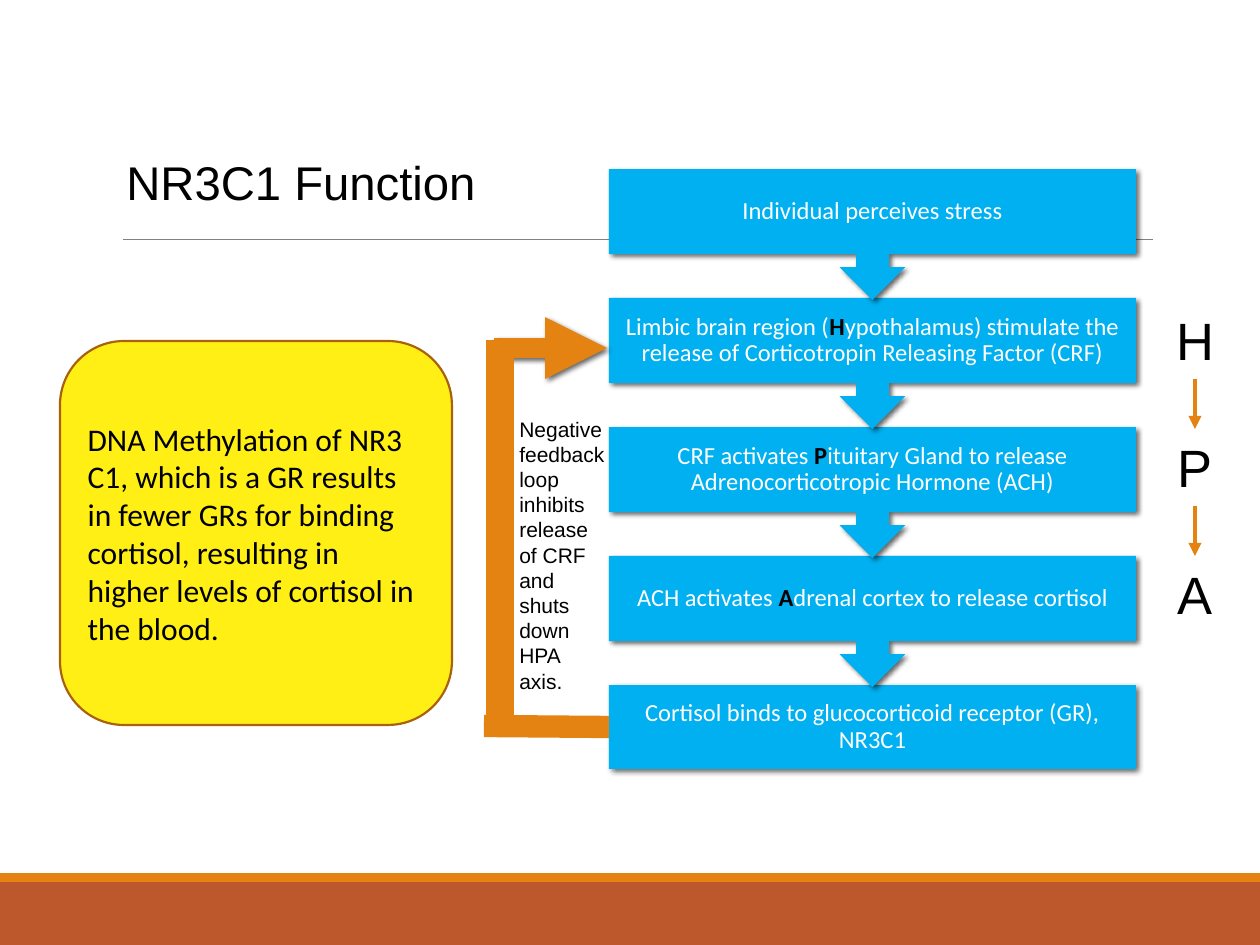
from dataclasses import dataclass

from lxml.etree import SubElement
from pptx import Presentation
from pptx.dml.color import RGBColor
from pptx.enum.shapes import MSO_CONNECTOR, MSO_SHAPE
from pptx.enum.text import MSO_ANCHOR, MSO_AUTO_SIZE, PP_ALIGN
from pptx.oxml import parse_xml
from pptx.oxml.ns import nsdecls, qn
from pptx.util import Pt

SCALE = 914400 / 126


@dataclass(frozen=True)
class Theme:
    rust: str = "BD582C"
    orange: str = "E48312"
    brown: str = "A9610D"
    blue: str = "00B0F0"
    yellow: str = "FFEF14"
    gray: str = "808080"
    white: str = "FFFFFF"
    black: str = "000000"
    heading_font: str = "Arial"
    body_font: str = "Calibri"
    title_size: int = 27
    letter_size: int = 30
    note_size: int = 18
    step_size: int = 14
    caption_size: int = 12


@dataclass(frozen=True)
class Box:
    left: int
    top: int
    width: int
    height: int

    def inner(self, left, top, width, height):
        return Box(self.left + left, self.top + top, width, height)

    def emu(self):
        return [px(value) for value in (self.left, self.top, self.width, self.height)]


THEME = Theme()

STEPS = [
    ("Individual perceives stress", "", ""),
    ("Limbic brain region (", "H",
     "ypothalamus) stimulate the release of Corticotropin Releasing Factor (CRF)"),
    ("CRF activates ", "P",
     "ituitary Gland to release Adrenocorticotropic Hormone (ACH)"),
    ("ACH activates ", "A", "drenal cortex to release cortisol"),
    ("Cortisol binds to glucocorticoid receptor (GR), NR3C1", "", ""),
]


def px(value):
    return round(value * SCALE)


def rgb(value):
    return RGBColor.from_string(value)


def style_font(font, name, size, color, bold=False):
    font.name = name
    font.size = Pt(size)
    font.bold = bold
    font.color.rgb = rgb(color)


def add_shadow(shape):
    shape._element.spPr.append(parse_xml(
        f'<a:effectLst {nsdecls("a")}>'
        '<a:outerShdw blurRad="38100" dist="25400" dir="2700000" rotWithShape="0">'
        '<a:srgbClr val="000000"><a:alpha val="60000"/></a:srgbClr>'
        '</a:outerShdw></a:effectLst>'))


def add_block(page, kind, box, fill, line=None):
    shape = page.shapes.add_shape(kind, *box.emu())
    shape.fill.solid()
    shape.fill.fore_color.rgb = rgb(fill)
    if line:
        shape.line.color.rgb = rgb(line)
        shape.line.width = Pt(1.25)
    else:
        shape.line.fill.background()
    return shape


def add_label(page, box, text, size, wrap=False, align=PP_ALIGN.LEFT):
    label = page.shapes.add_textbox(*box.emu())
    frame = label.text_frame
    frame.text = text
    frame.word_wrap = wrap
    frame.auto_size = MSO_AUTO_SIZE.SHAPE_TO_FIT_TEXT
    para = frame.paragraphs[0]
    para.alignment = align
    style_font(para.runs[0].font, THEME.heading_font, size, THEME.black)


def add_line(page, start, end, color, width, arrow=False, shadow=False):
    points = [px(value) for value in (*start, *end)]
    line = page.shapes.add_connector(MSO_CONNECTOR.STRAIGHT, *points)
    line.line.color.rgb = rgb(color)
    line.line.width = Pt(width)
    if arrow:
        SubElement(line.line._get_or_add_ln(), qn("a:tailEnd"), type="triangle")
    if shadow:
        add_shadow(line)
    else:
        SubElement(line._element.spPr, qn("a:effectLst"))
    return line


def add_footer(page, box):
    for top, height, color in ((9, box.height - 9, THEME.rust), (0, 9, THEME.orange)):
        band = add_block(page, MSO_SHAPE.RECTANGLE,
                         box.inner(0, top, box.width, height), color)
        band.shadow.inherit = False


def add_heading(page, box):
    rule = box.top + box.height
    add_line(page, (box.left, rule), (box.left + box.width, rule), THEME.gray, 0.5)
    add_label(page, box.inner(-9, -92 + 0, 378, 71), "NR3C1 Function", THEME.title_size)


def add_step(page, kind, box, parts):
    step = add_block(page, kind, box, THEME.blue)
    add_shadow(step)
    frame = step.text_frame
    frame.word_wrap = True
    frame.vertical_anchor = MSO_ANCHOR.MIDDLE
    frame.margin_left = frame.margin_right = px(14)
    frame.margin_top = frame.margin_bottom = px(14)
    para = frame.paragraphs[0]
    para.alignment = PP_ALIGN.CENTER
    para.line_spacing = 0.9
    for index, part in enumerate(parts):
        if part:
            span = para.add_run()
            span.text = part
            initial = index == 1
            style_font(span.font, THEME.body_font, THEME.step_size,
                       THEME.black if initial else THEME.white, initial)
    return step


def add_cascade(page, box):
    pitch, body, callout = 129, 84, 131
    last = len(STEPS) - 1
    final_step = add_step(page, MSO_SHAPE.RECTANGLE,
                          box.inner(0, last * pitch, box.width, body), STEPS[last])
    for index in reversed(range(last)):
        add_step(page, MSO_SHAPE.DOWN_ARROW_CALLOUT,
                 box.inner(0, index * pitch, box.width, callout), STEPS[index])
    return final_step


def add_axis(page, box):
    pitch, height = 127, 77
    center = box.left + box.width // 2
    for index, letter in enumerate("HPA"):
        top = index * pitch
        add_label(page, box.inner(0, top, box.width, height), letter,
                  THEME.letter_size, align=PP_ALIGN.CENTER)
        if index:
            add_line(page, (center, box.top + top - pitch + height),
                     (center, box.top + top), THEME.orange, 2.5, arrow=True)


def add_feedback(page, box, source):
    right, bottom = box.left + box.width, box.top + box.height
    stem = box.left + 16
    add_line(page, (box.left + 10, box.top + 8), (right - 2, box.top + 8),
             THEME.orange, 11.75, arrow=True, shadow=True)
    add_line(page, (stem, box.top), (stem, bottom), THEME.orange, 16)
    base = add_line(page, (box.left, bottom), (right, bottom), THEME.orange, 12.75)
    base.end_connect(source, 1)
    add_label(page, box.inner(23, 70, 112, 292),
              "Negative feedback loop inhibits release of CRF and shuts down HPA axis.",
              THEME.caption_size, wrap=True)


def add_note(page, box):
    note = add_block(page, MSO_SHAPE.ROUNDED_RECTANGLE, box, THEME.yellow, THEME.brown)
    note.shadow.inherit = False
    frame = note.text_frame
    frame.text = ("DNA Methylation of NR3 C1, which is a GR results in fewer GRs for "
                  "binding cortisol, resulting in higher levels of cortisol in the blood.")
    frame.word_wrap = True
    frame.vertical_anchor = MSO_ANCHOR.MIDDLE
    frame.margin_left = frame.margin_right = px(9)
    frame.margin_top = frame.margin_bottom = px(5)
    para = frame.paragraphs[0]
    para.alignment = PP_ALIGN.LEFT
    style_font(para.runs[0].font, THEME.body_font, THEME.note_size, THEME.black)


def main():
    deck = Presentation()
    deck.slide_width, deck.slide_height = px(1260), px(945)
    page = deck.slides.add_slide(deck.slide_layouts[6])
    add_footer(page, Box(0, 873, 1260, 72))
    add_heading(page, Box(123, 239, 1030, 0))
    final_step = add_cascade(page, Box(609, 169, 527, 600))
    add_axis(page, Box(1163, 302, 64, 331))
    add_feedback(page, Box(484, 340, 125, 386), final_step)
    add_note(page, Box(60, 341, 392, 384))
    deck.save("out.pptx")


if __name__ == "__main__":
    main()
